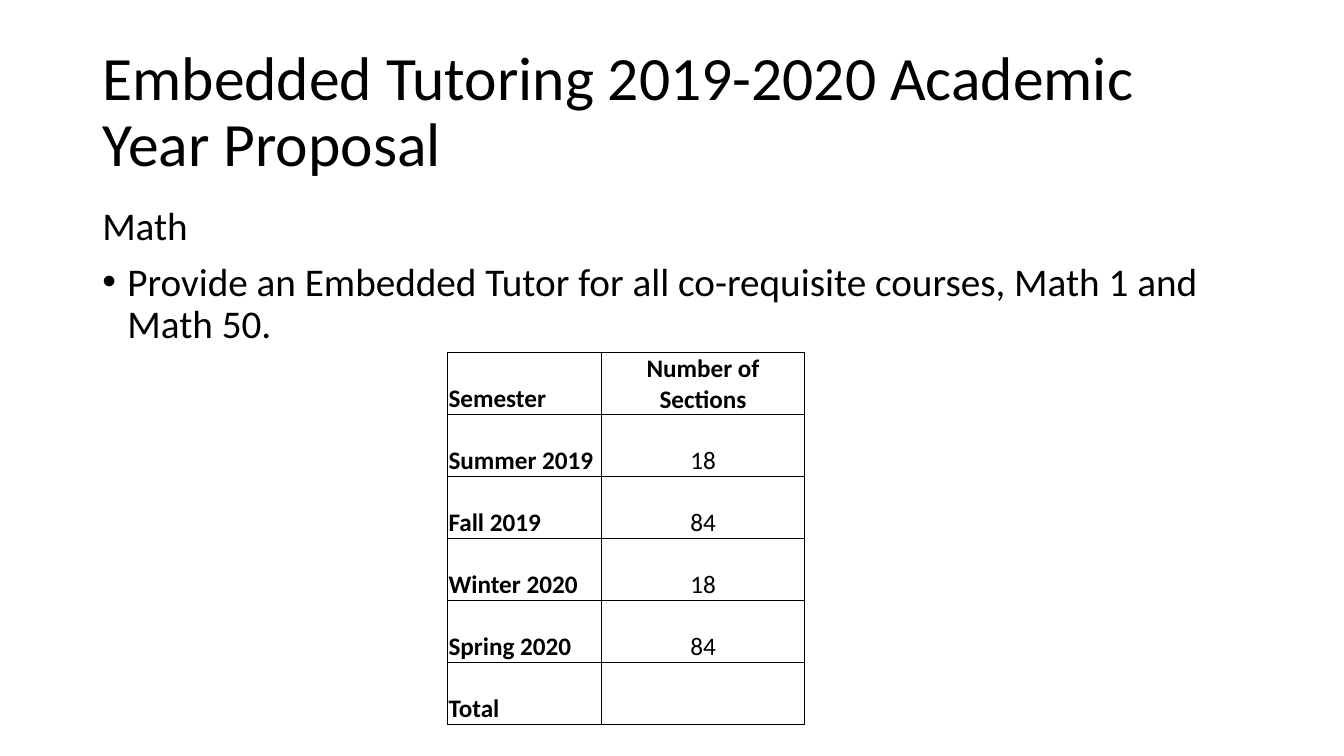
import pptx
import pptx.dml.color
import pptx.enum.text
import pptx.oxml
import pptx.oxml.ns
import pptx.util
from pptx.util import Pt

COLORS = {"text": "000000", "border": "000000"}
FONT = "Calibri"
TITLE_ONLY = 5
ANCHOR = pptx.enum.text.MSO_ANCHOR
ALIGN = pptx.enum.text.PP_ALIGN

SECTIONS = [
    ("Semester", "Number of Sections"),
    ("Summer 2019", "18"),
    ("Fall 2019", "84"),
    ("Winter 2020", "18"),
    ("Spring 2020", "84"),
    ("Total", ""),
]
COLUMN_WIDTHS = (110, 145)
ROW_HEIGHT = 44.2


def format_paragraph(paragraph, size, bold=False, align=ALIGN.LEFT):
    paragraph.alignment = align
    paragraph.font.name = FONT
    paragraph.font.size = Pt(size)
    paragraph.font.bold = bold
    paragraph.font.color.rgb = pptx.dml.color.RGBColor.from_string(COLORS["text"])


def add_xml(parent, tag, attributes="", content=""):
    namespace = pptx.oxml.ns.nsdecls("a")
    parent.append(pptx.oxml.parse_xml(
        f"<a:{tag} {namespace} {attributes}>{content}</a:{tag}>"))


def add_title(slide, text):
    title = slide.shapes.title
    title.left, title.top, title.width, title.height = Pt(66), Pt(28.75), Pt(828), Pt(104.4)
    frame = title.text_frame
    frame.text = text
    frame.word_wrap = True
    frame.auto_size = pptx.enum.text.MSO_AUTO_SIZE.NONE
    frame.vertical_anchor = ANCHOR.MIDDLE
    paragraph = frame.paragraphs[0]
    format_paragraph(paragraph, 44)
    paragraph.line_spacing = 0.9


def add_body(slide, heading, bullet):
    frame = slide.shapes.add_textbox(Pt(66), Pt(143.75), Pt(828), Pt(377.3)).text_frame
    frame.word_wrap = True
    frame.text = f"{heading}\n{bullet}"
    for paragraph in frame.paragraphs:
        format_paragraph(paragraph, 28)
        paragraph.line_spacing = 0.9
        paragraph.space_before = Pt(10)
    properties = frame.paragraphs[1]._p.get_or_add_pPr()
    properties.set("marL", str(Pt(18)))
    properties.set("indent", str(-Pt(18)))
    add_xml(properties, "buFont", 'typeface="Arial"')
    add_xml(properties, "buChar", 'char="•"')


def add_borders(cell):
    properties = cell._tc.get_or_add_tcPr()
    line = f'<a:solidFill><a:srgbClr val="{COLORS["border"]}"/></a:solidFill>'
    for side in ("lnL", "lnR", "lnT", "lnB"):
        add_xml(properties, side, f'w="{Pt(0.5)}"', line)


def fill_cell(cell, text, bold, align):
    cell.text = text
    cell.vertical_anchor = ANCHOR.BOTTOM
    cell.margin_left = cell.margin_right = cell.margin_top = Pt(0.7)
    cell.margin_bottom = 0
    format_paragraph(cell.text_frame.paragraphs[0], 18, bold, align)
    add_borders(cell)
    cell.fill.background()


def add_sections_table(slide):
    table = slide.shapes.add_table(
        len(SECTIONS), len(COLUMN_WIDTHS), Pt(319.7), Pt(252),
        Pt(sum(COLUMN_WIDTHS)), Pt(ROW_HEIGHT * len(SECTIONS))).table
    table.horz_banding = False
    table.first_row = False
    for column, width in zip(table.columns, COLUMN_WIDTHS):
        column.width = Pt(width)
    for row_index, values in enumerate(SECTIONS):
        table.rows[row_index].height = Pt(ROW_HEIGHT)
        for column_index, text in enumerate(values):
            is_header = row_index == 0 or column_index == 0
            align = ALIGN.CENTER if column_index else ALIGN.LEFT
            fill_cell(table.cell(row_index, column_index), text, is_header, align)


def main():
    presentation = pptx.Presentation()
    presentation.slide_width, presentation.slide_height = Pt(960), Pt(540)
    slide = presentation.slides.add_slide(presentation.slide_layouts[TITLE_ONLY])
    add_title(slide, "Embedded Tutoring 2019-2020 Academic Year Proposal")
    add_body(slide, "Math",
             "Provide an Embedded Tutor for all co-requisite courses, Math 1 and Math 50.")
    add_sections_table(slide)
    presentation.save("out.pptx")


if __name__ == "__main__":
    main()
